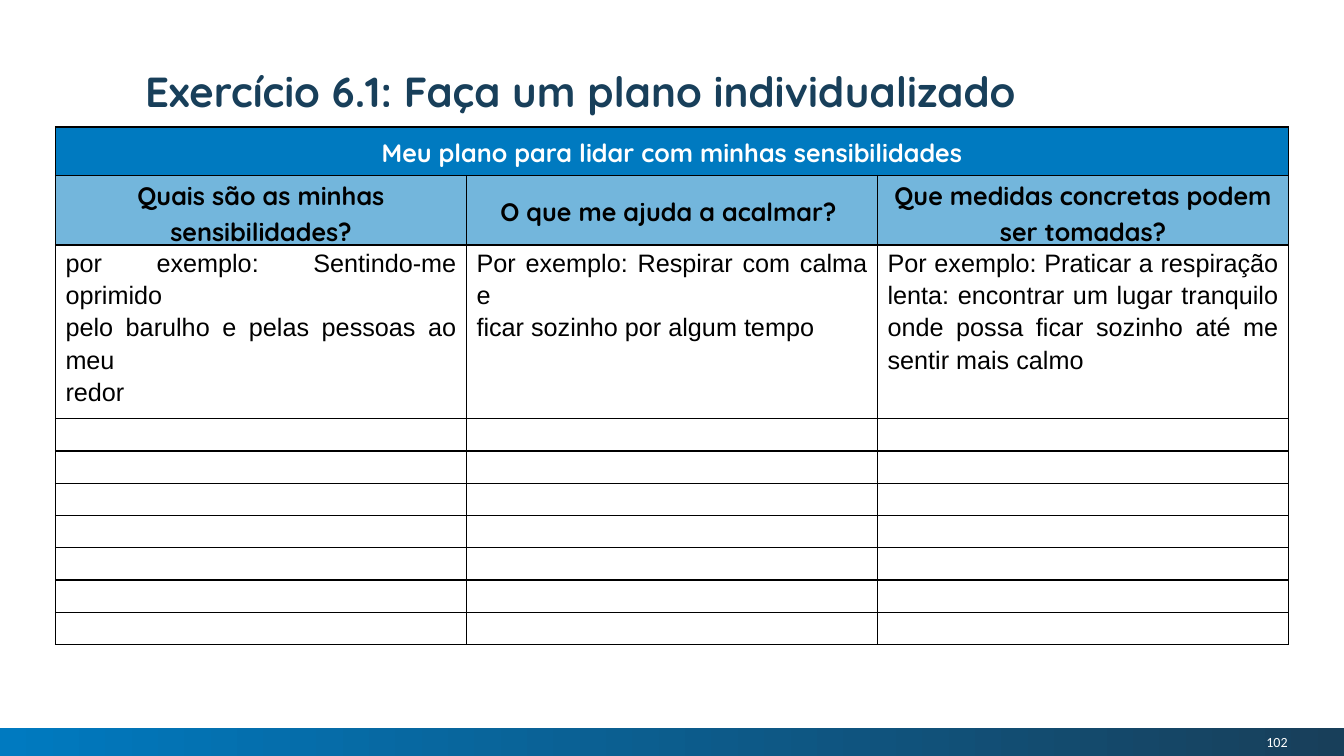
from dataclasses import dataclass

from lxml.etree import SubElement
from pptx import Presentation
from pptx.dml.color import RGBColor
from pptx.enum.shapes import MSO_SHAPE
from pptx.enum.text import MSO_ANCHOR as Anchor, MSO_AUTO_SIZE as AutoSize, PP_ALIGN as Align
from pptx.oxml.ns import qn
from pptx.util import Inches, Pt

TITLE = "Exercício 6.1: Faça um plano individualizado "
PAGE_NUMBER = "102"
PLAN_HEADING = "Meu plano para lidar com minhas sensibilidades"
QUESTIONS = [
    "Quais são as minhas sensibilidades?",
    "O que me ajuda a acalmar? ",
    "Que medidas concretas podem ser tomadas?",
]
EXAMPLES = [
    ["por exemplo: Sentindo-me oprimido", "pelo barulho e pelas pessoas ao meu", "redor"],
    ["Por exemplo: Respirar com calma e", "ficar sozinho por algum tempo"],
    ["Por exemplo: Praticar a respiração lenta: encontrar um lugar tranquilo "
     "onde possa ficar sozinho até me sentir mais calmo"],
]
BLANK_ROWS = 7


@dataclass(frozen=True)
class Theme:
    navy: str = "183F5A"
    blue: str = "007AC0"
    light_blue: str = "73B6DC"
    white: str = "FFFFFF"
    black: str = "000000"
    heading_font: str = "Quicksand"
    body_font: str = "Arial"
    number_font: str = "Calibri"
    title_size: int = 30
    table_size: int = 18
    number_size: int = 10
    border_width: int = 1


THEME = Theme()
WIDTH, HEIGHT = 13.33, 7.5
BAND_HEIGHT = 0.28
TABLE_LEFT, TABLE_TOP = 0.55, 1.26
TABLE_WIDTH = WIDTH - 2 * TABLE_LEFT
ROW_HEIGHTS = [0.48, 0.66, 0.82] + [0.32] * BLANK_ROWS


def write(frame, lines, font=THEME.body_font, size=THEME.table_size, color=THEME.black,
          bold=False, align=Align.LEFT, spacing=1.15):
    for index, line in enumerate(lines):
        paragraph = frame.add_paragraph() if index else frame.paragraphs[0]
        paragraph.alignment = align
        paragraph.line_spacing = spacing
        run = paragraph.add_run()
        run.text = line
        run.font.name, run.font.size, run.font.bold = font, Pt(size), bold
        run.font.color.rgb = RGBColor.from_string(color)


def style_cell(cell, fill=None):
    cell.margin_left = cell.margin_right = Inches(0.1)
    cell.margin_top = cell.margin_bottom = 0
    cell.vertical_anchor = Anchor.MIDDLE if fill else Anchor.TOP
    properties = cell._tc.get_or_add_tcPr()
    for side in ("L", "R", "T", "B"):
        border = SubElement(properties, qn(f"a:ln{side}"), w=str(Pt(THEME.border_width)))
        SubElement(SubElement(border, qn("a:solidFill")), qn("a:srgbClr"), val=THEME.black)
    if fill:
        cell.fill.solid()
        cell.fill.fore_color.rgb = RGBColor.from_string(fill)
    else:
        cell.fill.background()


def add_footer(slide):
    top = HEIGHT - BAND_HEIGHT
    band = slide.shapes.add_shape(MSO_SHAPE.RECTANGLE, 0, Inches(top),
                                  Inches(WIDTH), Inches(BAND_HEIGHT))
    band.shadow.inherit = False
    band.line.fill.background()
    band.fill.gradient()
    band.fill.gradient_angle = 0
    for stop, color in zip(band.fill.gradient_stops, (THEME.blue, THEME.navy)):
        stop.color.rgb = RGBColor.from_string(color)
    number = slide.shapes.add_textbox(Inches(10.97), Inches(top + 0.02),
                                      Inches(1.8), Inches(0.24))
    frame = number.text_frame
    frame.word_wrap = True
    frame.vertical_anchor = Anchor.MIDDLE
    frame.margin_left = frame.margin_right = frame.margin_top = frame.margin_bottom = 0
    write(frame, [PAGE_NUMBER], font=THEME.number_font, size=THEME.number_size,
          color=THEME.white, align=Align.RIGHT, spacing=1.0)


def add_title(slide):
    title = slide.shapes.title
    title.left, title.top = Inches(0.46), Inches(0.55)
    title.width, title.height = Inches(10.71), Inches(0.47)
    title.text_frame.auto_size = AutoSize.NONE
    title.text_frame.vertical_anchor = Anchor.TOP
    write(title.text_frame, [TITLE], font=THEME.heading_font, size=THEME.title_size,
          color=THEME.navy, bold=True, align=Align.CENTER, spacing=1.1)


def add_plan(slide):
    table = slide.shapes.add_table(
        len(ROW_HEIGHTS), len(QUESTIONS), Inches(TABLE_LEFT), Inches(TABLE_TOP),
        Inches(TABLE_WIDTH), Inches(sum(ROW_HEIGHTS))).table
    table.first_row = table.horz_banding = False
    for column in table.columns:
        column.width = Inches(TABLE_WIDTH / len(QUESTIONS))
    fills = {0: THEME.blue, 1: THEME.light_blue}
    for index, height in enumerate(ROW_HEIGHTS):
        table.rows[index].height = Inches(height)
        for cell in table.rows[index].cells:
            style_cell(cell, fills.get(index))
    table.cell(0, 0).merge(table.cell(0, len(QUESTIONS) - 1))
    heading = dict(font=THEME.heading_font, bold=True, align=Align.CENTER)
    write(table.cell(0, 0).text_frame, [PLAN_HEADING], color=THEME.white, **heading)
    for column, (question, example) in enumerate(zip(QUESTIONS, EXAMPLES)):
        write(table.cell(1, column).text_frame, [question], **heading)
        write(table.cell(2, column).text_frame, example, align=Align.JUSTIFY)


def main():
    presentation = Presentation()
    presentation.slide_width, presentation.slide_height = Inches(WIDTH), Inches(HEIGHT)
    slide = presentation.slides.add_slide(presentation.slide_layouts[5])
    add_footer(slide)
    add_plan(slide)
    add_title(slide)
    presentation.save("out.pptx")


if __name__ == "__main__":
    main()
